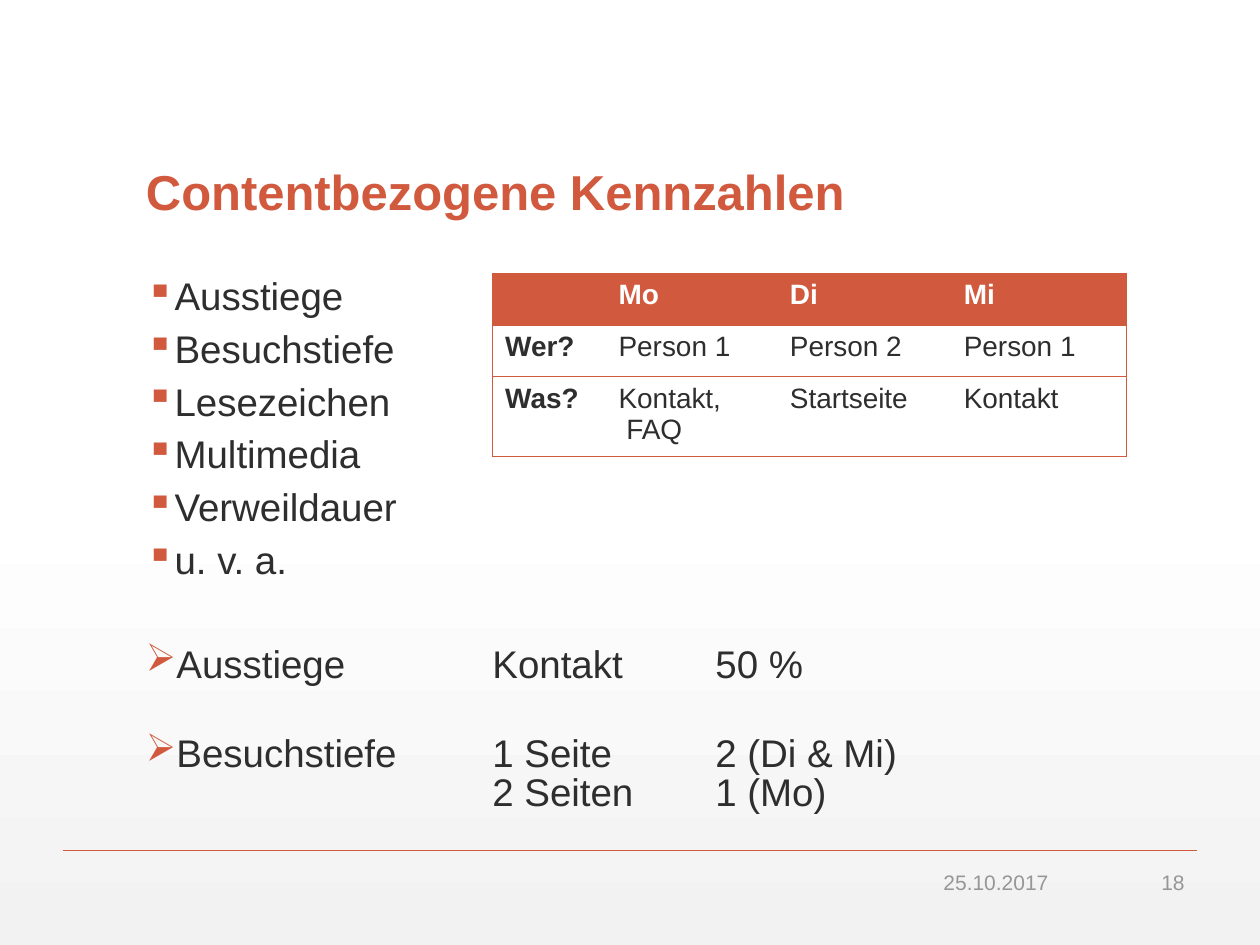
from lxml import etree
from pptx import Presentation
from pptx.dml.color import RGBColor
from pptx.enum.shapes import MSO_CONNECTOR
from pptx.enum.text import MSO_ANCHOR, PP_ALIGN
from pptx.oxml.ns import qn
from pptx.util import Inches, Pt

STRAIGHT = MSO_CONNECTOR.STRAIGHT
TOP, MIDDLE, BOTTOM = MSO_ANCHOR.TOP, MSO_ANCHOR.MIDDLE, MSO_ANCHOR.BOTTOM
LEFT, RIGHT = PP_ALIGN.LEFT, PP_ALIGN.RIGHT
ACCENT, INK, GREY, WHITE, PALE = "D15A3E", "2D2E2D", "959795", "FFFFFF", "F2F2F2"


def rgb(value):
    return RGBColor.from_string(value)


def add_color(parent, value):
    etree.SubElement(parent, qn("a:srgbClr"), val=value)


class SlideBuilder:
    """Holds the style and the current slide and adds each kind of element."""

    font = "Arial"
    hanging = Inches(0.19)

    def __init__(self, slide):
        self.slide = slide

    def background(self, top, bottom):
        fill = self.slide.background.fill
        fill.gradient()
        fill.gradient_angle = 270
        for stop, position, color in zip(fill.gradient_stops, (0.53, 1), (top, bottom)):
            stop.position = position
            stop.color.rgb = rgb(color)

    def format_runs(self, paragraph, size, color, bold=False):
        for run in paragraph.runs:
            run.font.name = self.font
            run.font.size = Pt(size)
            run.font.bold = bold
            run.font.color.rgb = rgb(color)

    def frame(self, box, anchor=TOP):
        text_frame = self.slide.shapes.add_textbox(*map(Inches, box)).text_frame
        text_frame.word_wrap = True
        text_frame.vertical_anchor = anchor
        return text_frame

    def text(self, box, wording, size, color, bold=False, anchor=MIDDLE, align=LEFT, spacing=1.0):
        text_frame = self.frame(box, anchor)
        text_frame.text = wording
        paragraph = text_frame.paragraphs[0]
        paragraph.alignment = align
        paragraph.line_spacing = spacing
        self.format_runs(paragraph, size, color, bold)

    def bullet(self, paragraph, symbol, tabs):
        properties = paragraph._p.get_or_add_pPr()
        properties.set("marL", str(self.hanging))
        properties.set("indent", str(-self.hanging))
        add_color(etree.SubElement(properties, qn("a:buClr")), ACCENT)
        etree.SubElement(properties, qn("a:buChar"), char=symbol)
        if tabs:
            tab_list = etree.SubElement(properties, qn("a:tabLst"))
            for tab in tabs:
                etree.SubElement(tab_list, qn("a:tab"), pos=str(Inches(tab)), algn="l")

    def bullets(self, box, items, size, spacing):
        text_frame = self.frame(box)
        for index, (symbol, wording, gap, tabs) in enumerate(items):
            paragraph = text_frame.add_paragraph() if index else text_frame.paragraphs[0]
            paragraph.text = wording
            paragraph.line_spacing = spacing
            paragraph.space_before = Pt(gap)
            self.bullet(paragraph, symbol, tabs)
            self.format_runs(paragraph, size, INK)

    def rule(self, left, right, y):
        line = self.slide.shapes.add_connector(
            STRAIGHT, Inches(left), Inches(y), Inches(right), Inches(y))
        line.line.color.rgb = rgb(ACCENT)
        line.line.width = Pt(1)
        etree.SubElement(line._element.spPr, qn("a:effectLst"))

    def borders(self, cell, visible):
        properties = cell._tc.get_or_add_tcPr()
        for side in "LRTB":
            edge = etree.SubElement(properties, qn(f"a:ln{side}"), w=str(Pt(0.5)))
            if side in visible:
                add_color(etree.SubElement(edge, qn("a:solidFill")), ACCENT)
            else:
                etree.SubElement(edge, qn("a:noFill"))

    def table(self, left, top, widths, row_height, rows):
        height = row_height * len(rows)
        table = self.slide.shapes.add_table(
            len(rows), len(widths), Inches(left), Inches(top),
            Inches(sum(widths)), Inches(height)).table
        table.first_row = table.horz_banding = False
        for column, width in zip(table.columns, widths):
            column.width = Inches(width)
        for r, row in enumerate(rows):
            table.rows[r].height = Inches(row_height)
            for c, wording in enumerate(row):
                cell = table.cell(r, c)
                outer = {0: "L", len(widths) - 1: "R"}.get(c, "")
                self.borders(cell, "TB" + outer)
                if r == 0:
                    cell.fill.solid()
                    cell.fill.fore_color.rgb = rgb(ACCENT)
                else:
                    cell.fill.background()
                cell.text = wording
                self.format_runs(cell.text_frame.paragraphs[0], 16,
                                 INK if r else WHITE, r == 0 or c == 0)


def main():
    presentation = Presentation()
    presentation.slide_width, presentation.slide_height = Inches(10), Inches(7.5)
    builder = SlideBuilder(presentation.slides.add_slide(presentation.slide_layouts[6]))

    builder.background(WHITE, PALE)
    builder.rule(0.5, 9.5, 6.75)
    builder.text((1.06, 0.55, 7.88, 1.25), "Contentbezogene Kennzahlen", 28, ACCENT,
                 bold=True, anchor=BOTTOM, spacing=0.9)

    metrics = ["Ausstiege", "Besuchstiefe", "Lesezeichen", "Multimedia", "Verweildauer", "u. v. a."]
    result_tabs = (2.75, 4.52)
    items = [("▪", metric, 8, ()) for metric in metrics]
    items += [
        ("➢", "Ausstiege\tKontakt\t50 %", 37, result_tabs),
        ("➢", "Besuchstiefe\t1 Seite\t2 (Di & Mi)\v\t2 Seiten\t1 (Mo)", 29, result_tabs),
    ]
    builder.bullets((1.06, 2.17, 7.88, 4.57), items, 22, 0.84)

    builder.table(3.91, 2.17, (0.9, 1.36, 1.38, 1.39), 0.41, [
        ("", "Mo", "Di", "Mi"),
        ("Wer?", "Person 1", "Person 2", "Person 1"),
        ("Was?", "Kontakt,\v FAQ", "Startseite", "Kontakt"),
    ])

    for left, width, wording in ((7, 1.42, "25.10.2017"), (8.75, 0.75, "18")):
        builder.text((left, 6.88, width, 0.24), wording, 12, GREY, align=RIGHT)

    presentation.save("out.pptx")


if __name__ == "__main__":
    main()
